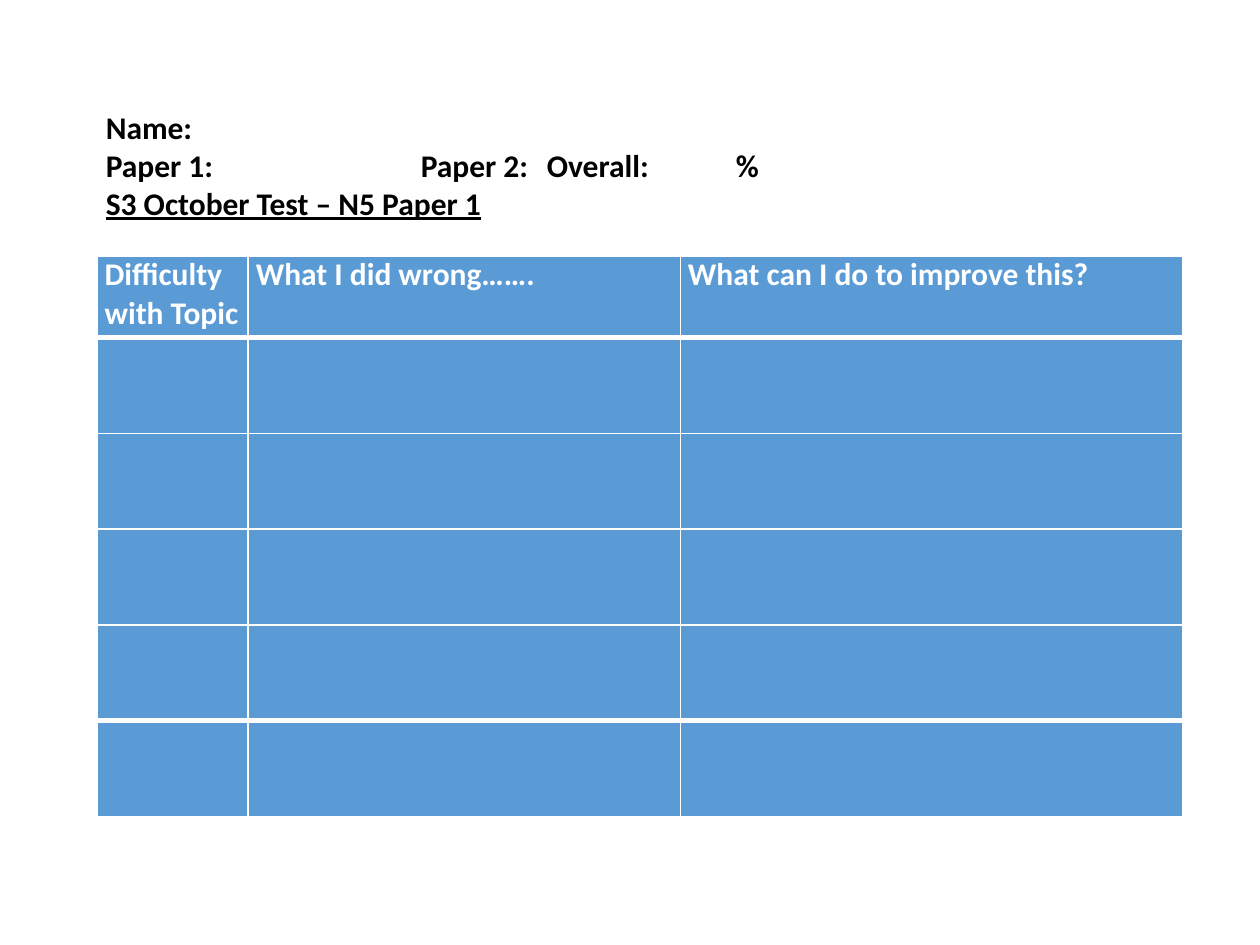
from lxml import etree
from pptx import Presentation
from pptx.dml.color import RGBColor
from pptx.enum.text import MSO_ANCHOR
from pptx.oxml.ns import qn
from pptx.util import Inches, Pt

TOP = MSO_ANCHOR.TOP
FONT = "Calibri"
BLACK, WHITE, BLUE = "000000", "FFFFFF", "5B9BD5"
LEFT = 0.77

HEADINGS = ["Difficulty with Topic", "What I did wrong…….",
            "What can I do to improve this?"]
COL_WIDTHS = [1.2, 3.43, 3.99]
ROW_HEIGHTS = [0.65] + [0.76] * 5


def rgb(color):
    return RGBColor.from_string(color)


def style_paragraph(p, color, underline=None):
    p.font.name = FONT
    p.font.size = Pt(18)
    p.font.bold = True
    p.font.underline = underline
    p.font.color.rgb = rgb(color)


def set_margins(target, x, y):
    target.margin_left = target.margin_right = Inches(x)
    target.margin_top = target.margin_bottom = Inches(y)


def set_borders(cell, color, top, bottom):
    """Draw the four cell borders; the side borders are 1 pt wide."""
    tcPr = cell._tc.get_or_add_tcPr()
    sides = [("a:lnL", 1), ("a:lnR", 1), ("a:lnT", top), ("a:lnB", bottom)]
    for i, (tag, width) in enumerate(sides):
        ln = etree.Element(qn(tag), w=str(Pt(width)))
        fill = etree.SubElement(ln, qn("a:solidFill"))
        etree.SubElement(fill, qn("a:srgbClr"), val=color)
        tcPr.insert(i, ln)  # borders come before the cell fill


def add_details(slide):
    box = slide.shapes.add_textbox(Inches(LEFT), Inches(0.82),
                                   Inches(9.1), Inches(1.21))
    tf = box.text_frame
    tf.word_wrap = True
    tf.vertical_anchor = TOP
    set_margins(tf, 0.07, 0.04)
    tf.text = ("Name:\n"
               "Paper 1:\t\t\t\tPaper 2:\tOverall:\t\t%\n"
               "S3 October Test – N5 Paper 1")
    for p in tf.paragraphs:
        style_paragraph(p, BLACK)
    tf.paragraphs[-1].font.underline = True


def add_review_table(slide):
    last = len(ROW_HEIGHTS) - 1
    table = slide.shapes.add_table(
        len(ROW_HEIGHTS), len(COL_WIDTHS), Inches(LEFT), Inches(2.03),
        Inches(sum(COL_WIDTHS)), Inches(sum(ROW_HEIGHTS))).table
    for col, width in zip(table.columns, COL_WIDTHS):
        col.width = Inches(width)
    for r, height in enumerate(ROW_HEIGHTS):
        table.rows[r].height = Inches(height)
        # Thick rules below the heading row and above the last row
        top = 3 if r in (1, last) else 1
        bottom = 3 if r in (0, last - 1) else 1
        for cell in table.rows[r].cells:
            cell.fill.solid()
            cell.fill.fore_color.rgb = rgb(BLUE)
            set_margins(cell, 0.06, 0)
            set_borders(cell, WHITE, top, bottom)
    for cell, heading in zip(table.rows[0].cells, HEADINGS):
        cell.text = heading
        style_paragraph(cell.text_frame.paragraphs[0], WHITE)


def main():
    prs = Presentation()
    prs.slide_width, prs.slide_height = Inches(10), Inches(7.5)
    slide = prs.slides.add_slide(prs.slide_layouts[6])

    # Topic review grid
    add_review_table(slide)
    # Pupil details and test title
    add_details(slide)

    prs.save("out.pptx")


if __name__ == "__main__":
    main()
